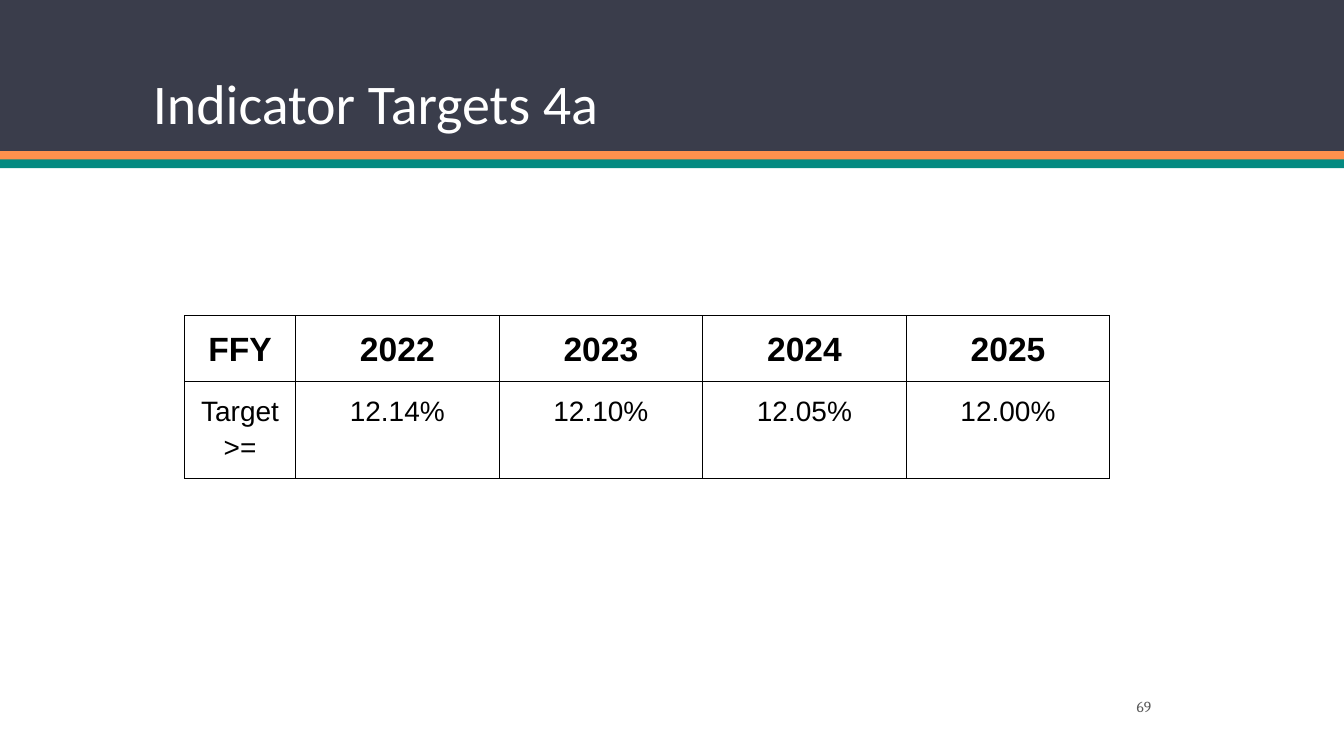
from dataclasses import dataclass

from lxml import etree
from pptx import Presentation
from pptx.dml.color import RGBColor
from pptx.enum import shapes, text
from pptx.oxml import ns
from pptx.util import Cm, Pt

COLORS = {
    "navy": "3A3D4B",
    "orange": "FF914D",
    "teal": "048A81",
    "white": "FFFFFF",
    "black": "000000",
    "grey": "595959",
}
SLIDE_W, SLIDE_H = 33.87, 19.05
TARGETS = {"FFY": "Target >=", "2022": "12.14%", "2023": "12.10%",
           "2024": "12.05%", "2025": "12.00%"}
COL_WIDTHS = [2.8] + [5.13] * 4


@dataclass
class Band:
    """A full-width stripe of the header, in centimetres."""
    top: float
    height: float
    color: str


@dataclass
class TableRow:
    """A table row with its height in centimetres and text format."""
    values: list[str]
    height: float
    size: int
    bold: bool


BANDS = [
    Band(0, 3.81, "navy"),
    Band(3.81, 0.22, "orange"),
    Band(4.02, 0.22, "teal"),
]
ROWS = [
    TableRow(list(TARGETS), 1.61, 24, True),
    TableRow(list(TARGETS.values()), 2.32, 20, False),
]


def write(tf, content: str, *, font: str, size: int, color: str, bold: bool = False,
          align=text.PP_ALIGN.LEFT, line: float = 1.0, space: int = 0) -> None:
    """Put one formatted paragraph into a text frame."""
    tf.word_wrap = True
    p = tf.paragraphs[0]
    p.alignment = align
    p.line_spacing = line
    p.space_before = p.space_after = Pt(space)
    r = p.add_run()
    r.text = content
    r.font.name = font
    r.font.size = Pt(size)
    r.font.bold = bold
    r.font.color.rgb = RGBColor.from_string(COLORS[color])


def add_band(s, band: Band) -> None:
    """Draw one header stripe."""
    sp = s.shapes.add_shape(shapes.MSO_SHAPE.RECTANGLE, 0, Cm(band.top),
                            Cm(SLIDE_W), Cm(band.height))
    sp.shadow.inherit = False
    sp.fill.solid()
    sp.fill.fore_color.rgb = RGBColor.from_string(COLORS[band.color])
    sp.line.fill.background()


def add_title(s, content: str) -> None:
    """Place the title placeholder on top of the header stripes."""
    title = s.shapes.title
    title.element.getparent().append(title.element)
    title.left, title.top, title.width, title.height = Cm(3.6), Cm(0.72), Cm(26.67), Cm(2.86)
    tf = title.text_frame
    tf.auto_size = text.MSO_AUTO_SIZE.NONE
    tf.vertical_anchor = text.MSO_ANCHOR.BOTTOM
    write(tf, content, font="Calibri", size=40, color="white", line=0.9)


def add_page_number(s, number: str) -> None:
    """Write the page number at the lower right."""
    sp = s.shapes.add_textbox(Cm(25.45), Cm(17.42), Cm(3.81), Cm(0.76))
    sp.text_frame.vertical_anchor = text.MSO_ANCHOR.MIDDLE
    write(sp.text_frame, number, font="Cambria", size=11, color="grey",
          align=text.PP_ALIGN.RIGHT)


def outline(cell, color: str, width: float) -> None:
    """Give a cell a solid border on all four sides."""
    props = cell._tc.get_or_add_tcPr()
    for i, side in enumerate(("lnL", "lnR", "lnT", "lnB")):
        ln = etree.Element(ns.qn(f"a:{side}"), w=str(Pt(width)))
        fill = etree.SubElement(ln, ns.qn("a:solidFill"))
        etree.SubElement(fill, ns.qn("a:srgbClr"), val=COLORS[color])
        props.insert(i, ln)


def add_target_table(s, rows: list[TableRow]) -> None:
    """Draw the table of yearly targets."""
    frame = s.shapes.add_table(len(rows), len(COL_WIDTHS), Cm(4.65), Cm(7.95),
                               Cm(sum(COL_WIDTHS)), Cm(sum(row.height for row in rows)))
    table = frame.table
    table.first_row = table.horz_banding = False
    for col, width in zip(table.columns, COL_WIDTHS):
        col.width = Cm(width)
    for i, row in enumerate(rows):
        table.rows[i].height = Cm(row.height)
        for cell, value in zip(table.rows[i].cells, row.values):
            cell.margin_left = cell.margin_right = Cm(0.18)
            cell.margin_top = cell.margin_bottom = Cm(0.25)
            cell.fill.background()
            outline(cell, "black", 0.72)
            write(cell.text_frame, value, font="Arial", size=row.size, color="black",
                  bold=row.bold, align=text.PP_ALIGN.CENTER, line=1.15, space=12)


def main() -> None:
    """Build the slide and save it."""
    prs = Presentation()
    prs.slide_width, prs.slide_height = Cm(SLIDE_W), Cm(SLIDE_H)
    s = prs.slides.add_slide(prs.slide_layouts[5])
    for band in BANDS:
        add_band(s, band)
    add_title(s, "Indicator Targets 4a")
    add_page_number(s, "69")
    add_target_table(s, ROWS)
    prs.save("out.pptx")


if __name__ == "__main__":
    main()
